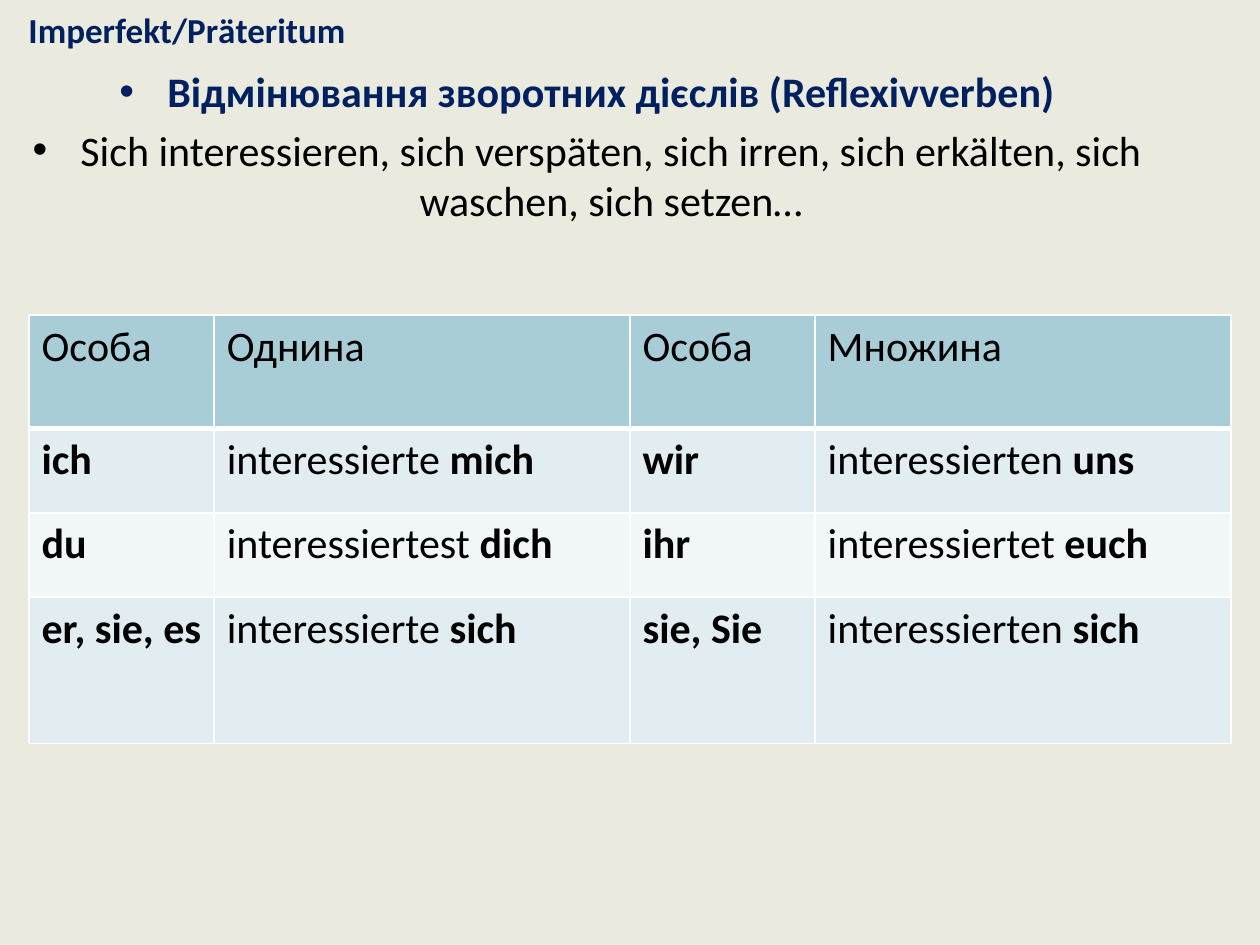
from typing import NamedTuple

from lxml import etree
from pptx import Presentation
from pptx.dml.color import RGBColor
from pptx.enum.text import MSO_ANCHOR, MSO_AUTO_SIZE, PP_ALIGN
from pptx.oxml.ns import qn
from pptx.util import Inches, Pt

CENTER = PP_ALIGN.CENTER
MIDDLE = MSO_ANCHOR.MIDDLE
NO_AUTOFIT = MSO_AUTO_SIZE.NONE
TITLE_ONLY = 5

COLORS = {
    "background": "EAEBDE",
    "heading": "002060",
    "text": "000000",
    "border": "FFFFFF",
    "header": "A8CDD7",
    "odd_row": "E1EDF0",
    "even_row": "F1F6F8",
}


class Run(NamedTuple):
    text: str
    bold: bool = False
    color: str = "text"
    size: int = 24


class Form(NamedTuple):
    person: str
    verb: str
    pronoun: str


TITLE = Run("Imperfekt/Prӓteritum", True, "heading", 20)
INTRODUCTION = [
    Run("Відмінювання зворотних дієслів (Reflexivverben)", True, "heading"),
    Run("Sich interessieren, sich verspäten, sich irren, sich erkälten, "
        "sich waschen, sich setzen…"),
]
HEADERS = ["Особа", "Однина", "Особа", "Множина"]
CONJUGATION = [
    (Form("ich", "interessierte", "mich"), Form("wir", "interessierten", "uns")),
    (Form("du", "interessiertest", "dich"), Form("ihr", "interessiertet", "euch")),
    (Form("er, sie, es", "interessierte", "sich"),
     Form("sie, Sie", "interessierten", "sich")),
]
COLUMN_WIDTHS = [1.47, 3.3] * 2
ROW_HEIGHTS = [0.9, 0.67, 0.67, 1.16]


def rgb(name: str) -> RGBColor:
    return RGBColor.from_string(COLORS[name])


def add_run(paragraph, content: Run) -> None:
    run = paragraph.add_run()
    run.text = content.text
    values = {"name": "Calibri", "size": Pt(content.size), "bold": content.bold}
    for attribute, value in values.items():
        setattr(run.font, attribute, value)
    run.font.color.rgb = rgb(content.color)


def set_bullet(paragraph, indent: float) -> None:
    properties = paragraph._p.get_or_add_pPr()
    properties.set("marL", str(Inches(indent)))
    properties.set("indent", str(-Inches(indent)))
    etree.SubElement(properties, qn("a:buFont"), typeface="Arial")
    etree.SubElement(properties, qn("a:buChar"), char="•")


def set_borders(cell, top: int, bottom: int) -> None:
    """Draw the four cell borders; top and bottom are widths in points."""
    properties = cell._tc.get_or_add_tcPr()
    for side, width in {"L": 1, "R": 1, "T": top, "B": bottom}.items():
        line = etree.SubElement(properties, qn(f"a:ln{side}"), w=str(Pt(width)))
        fill = etree.SubElement(line, qn("a:solidFill"))
        etree.SubElement(fill, qn("a:srgbClr"), val=COLORS["border"])


def add_title(slide) -> None:
    title = slide.shapes.title
    place = {"left": 0, "top": 0, "width": 2.97, "height": 0.47}
    for attribute, value in place.items():
        setattr(title, attribute, Inches(value))
    frame = title.text_frame
    frame.auto_size = NO_AUTOFIT
    frame.vertical_anchor = MIDDLE
    frame.paragraphs[0].alignment = CENTER
    add_run(frame.paragraphs[0], TITLE)


def add_introduction(slide) -> None:
    box = slide.shapes.add_textbox(Inches(0.16), Inches(0.47), Inches(9), Inches(4.95))
    frame = box.text_frame
    frame.word_wrap = True
    for index, content in enumerate(INTRODUCTION):
        paragraph = frame.add_paragraph() if index else frame.paragraphs[0]
        paragraph.alignment = CENTER
        paragraph.space_before = Pt(0.2 * content.size)
        set_bullet(paragraph, 0.38)
        add_run(paragraph, content)


def table_rows() -> list[list[list[Run]]]:
    """Return the runs of every cell, row by row."""
    rows = [[[Run(header)] for header in HEADERS]]
    for forms in CONJUGATION:
        row = []
        for form in forms:
            row.append([Run(form.person, True)])
            row.append([Run(form.verb + " "), Run(form.pronoun, True)])
        rows.append(row)
    return rows


def add_conjugation_table(slide) -> None:
    table = slide.shapes.add_table(
        len(ROW_HEIGHTS), len(COLUMN_WIDTHS), Inches(0.23), Inches(2.5),
        Inches(sum(COLUMN_WIDTHS)), Inches(sum(ROW_HEIGHTS)),
    ).table
    for column, width in zip(table.columns, COLUMN_WIDTHS):
        column.width = Inches(width)
    for row_index, cells in enumerate(table_rows()):
        table.rows[row_index].height = Inches(ROW_HEIGHTS[row_index])
        if row_index == 0:
            fill = "header"
        else:
            fill = "odd_row" if row_index % 2 else "even_row"
        for column_index, runs in enumerate(cells):
            cell = table.cell(row_index, column_index)
            set_borders(cell, top=3 if row_index == 1 else 1,
                        bottom=3 if row_index == 0 else 1)
            cell.fill.solid()
            cell.fill.fore_color.rgb = rgb(fill)
            for content in runs:
                add_run(cell.text_frame.paragraphs[0], content)


def main() -> None:
    presentation = Presentation()
    presentation.slide_width = Inches(10)
    presentation.slide_height = Inches(7.5)
    slide = presentation.slides.add_slide(presentation.slide_layouts[TITLE_ONLY])
    slide.background.fill.solid()
    slide.background.fill.fore_color.rgb = rgb("background")
    add_introduction(slide)
    add_conjugation_table(slide)
    add_title(slide)
    presentation.save("out.pptx")


if __name__ == "__main__":
    main()
